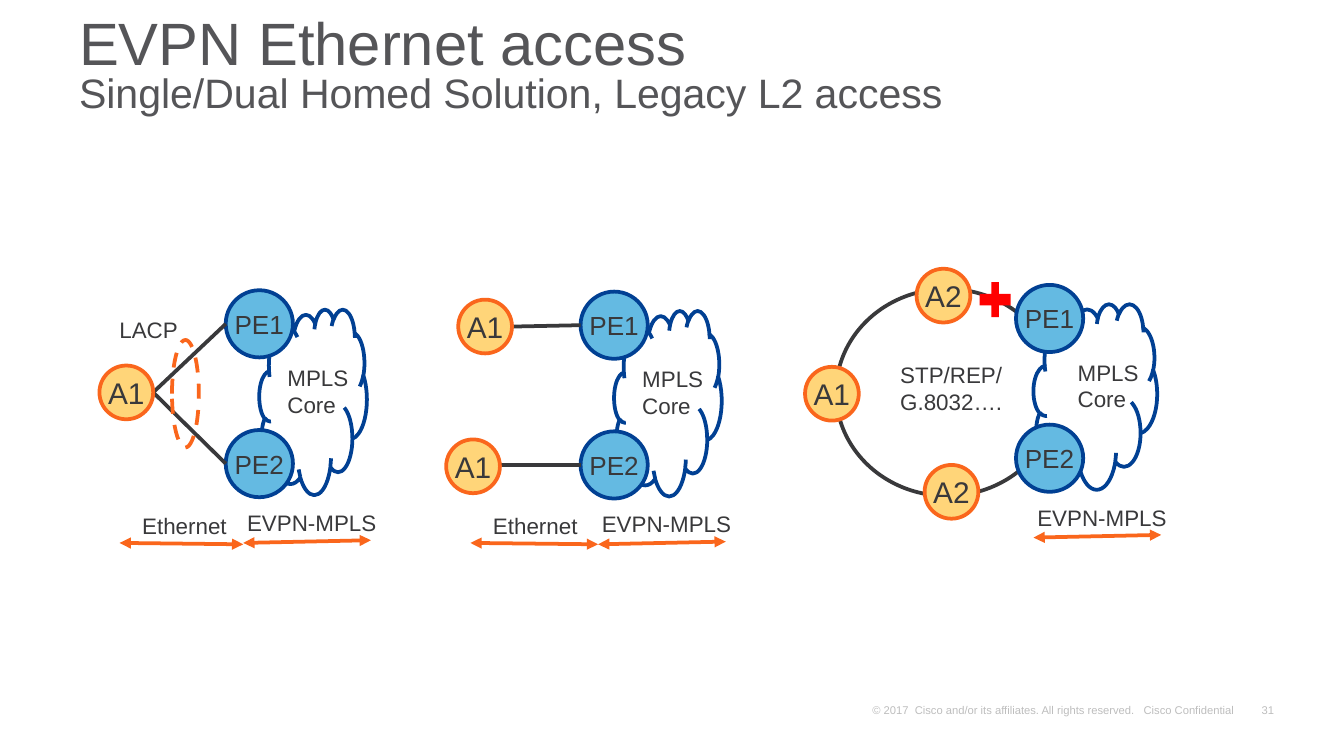
"""Build the EVPN Ethernet access slide with three access topologies."""
from dataclasses import dataclass
from typing import Optional

from lxml.etree import SubElement
from pptx import Presentation
from pptx.dml.color import RGBColor
from pptx.enum.dml import MSO_LINE
from pptx.enum.shapes import MSO_CONNECTOR, MSO_SHAPE as Preset
from pptx.enum.text import MSO_ANCHOR as Anchor, PP_ALIGN as Align
from pptx.oxml.ns import qn
from pptx.util import Inches, Pt

INK = RGBColor(0x39, 0x39, 0x3B)
TITLE_GRAY = RGBColor(0x55, 0x55, 0x58)
BLACK = RGBColor(0, 0, 0)
WHITE = RGBColor(0xFF, 0xFF, 0xFF)
NAVY = RGBColor(0x01, 0x40, 0x93)
SKY = RGBColor(0x64, 0xBA, 0xE2)
SAND = RGBColor(0xFF, 0xD5, 0x79)
ORANGE = RGBColor(0xFA, 0x66, 0x1C)
RED = RGBColor(0xFF, 0, 0)

Box = tuple[float, float, float, float]
Point = tuple[float, float]


@dataclass
class Style:
    fill: Optional[RGBColor]
    line: Optional[RGBColor]
    size: int = 12


@dataclass
class Core:
    left: float
    top: float
    cloud_dx: float = 0.25
    cloud_width: float = 0.8
    cloud_fill: Optional[RGBColor] = None


@dataclass
class AccessNode:
    label: str
    left: float
    top: float


PROVIDER_EDGE = Style(SKY, NAVY, 14)
ACCESS = Style(SAND, ORANGE, 16)
NODE_SIZE = 0.4
EDGE_SIZE = 0.5
EDGE_PITCH = 1.04

LAG_CORE = Core(1.68, 2.16)
SINGLE_CORE = Core(4.32, 2.17)
RING_CORE = Core(7.56, 2.12, 0.13, 0.92, WHITE)
ACCESS_NODES = [
    AccessNode("A1", 0.74, 2.72),
    AccessNode("A1", 3.41, 2.23),
    AccessNode("A1", 3.32, 3.27),
    AccessNode("A1", 5.99, 2.73),
    AccessNode("A2", 6.82, 2.0),
    AccessNode("A2", 6.88, 3.46),
]
ACCESS_LINKS = [
    ((1.14, 2.92), (1.68, 2.41)),
    ((1.68, 3.45), (1.14, 2.92)),
    ((3.81, 2.43), (4.32, 2.42)),
    ((4.32, 3.46), (3.71, 3.46)),
]


def write(paragraph, text: str, size: int, color: RGBColor = INK):
    run = paragraph.add_run()
    run.text = text
    run.font.color.rgb = color
    for name, value in {"name": "Arial", "size": Pt(size)}.items():
        setattr(run.font, name, value)
    return run


def add_shape(slide, preset, box: Box, style: Style, text: str = ""):
    shape = slide.shapes.add_shape(preset, *map(Inches, box))
    shape.shadow.inherit = False
    if style.fill is None:
        shape.fill.background()
    else:
        shape.fill.solid()
        shape.fill.fore_color.rgb = style.fill
    if style.line is None:
        shape.line.fill.background()
    else:
        shape.line.color.rgb = style.line
        shape.line.width = Pt(2)
    if text:
        frame = shape.text_frame
        for name, value in {"word_wrap": False, "vertical_anchor": Anchor.MIDDLE}.items():
            setattr(frame, name, value)
        frame.paragraphs[0].alignment = Align.CENTER
        write(frame.paragraphs[0], text, style.size)
    return shape


def add_frame(slide, box: Box, **formats):
    frame = slide.shapes.add_textbox(*map(Inches, box)).text_frame
    for name, value in formats.items():
        setattr(frame, name, value)
    return frame


def add_label(slide, box: Box, *lines: str) -> None:
    frame = add_frame(slide, box, word_wrap=False)
    for index, line in enumerate(lines):
        paragraph = frame.add_paragraph() if index else frame.paragraphs[0]
        write(paragraph, line, 12)


def add_line(slide, start: Point, end: Point, color: RGBColor, arrows: bool = False) -> None:
    connector = slide.shapes.add_connector(
        MSO_CONNECTOR.STRAIGHT, *map(Inches, (*start, *end)))
    connector.line.color.rgb = color
    connector.line.width = Pt(2)
    properties = connector._element.spPr
    if arrows:
        outline = properties.find(qn("a:ln"))
        for tag in ("a:headEnd", "a:tailEnd"):
            SubElement(outline, qn(tag), type="triangle")
    SubElement(properties, qn("a:effectLst"))


def add_core(slide, core: Core) -> None:
    x, y = core.left, core.top
    add_shape(slide, Preset.CLOUD, (x + core.cloud_dx, y + 0.14, core.cloud_width, 1.38),
              Style(core.cloud_fill, NAVY))
    add_label(slide, (x + 0.36, y + 0.5, 0.71, 0.5), "MPLS", "Core")
    for index, name in enumerate(("PE1", "PE2")):
        add_shape(slide, Preset.OVAL, (x, y + index * EDGE_PITCH, EDGE_SIZE, EDGE_SIZE),
                  PROVIDER_EDGE, name)
    add_label(slide, (x + 0.06, y + 1.58, 1.17, 0.3), "EVPN-MPLS")
    add_line(slide, (x + 1.08, y + 1.86), (x + 0.13, y + 1.88), ORANGE, arrows=True)


def add_ethernet_span(slide, left: float, core: Core) -> None:
    add_line(slide, (core.left + 0.13, 4.05), (left, 4.04), ORANGE, arrows=True)
    add_label(slide, (left + 0.07, 3.76, 0.84, 0.3), "Ethernet")


def add_title(slide) -> None:
    frame = add_frame(slide, (0.49, 0.11, 9.13, 0.8), word_wrap=True,
                      vertical_anchor=Anchor.MIDDLE)
    paragraph = frame.paragraphs[0]
    paragraph.line_spacing = 0.8
    write(paragraph, "EVPN Ethernet access", 32, TITLE_GRAY)
    paragraph.add_line_break()
    write(paragraph, "Single/Dual Homed Solution, Legacy L2 access", 22, TITLE_GRAY)


def add_footer(slide, box: Box, text: str, align, wrap: bool) -> None:
    frame = add_frame(slide, box, word_wrap=wrap, vertical_anchor=Anchor.BOTTOM,
                      margin_left=Inches(0.07), margin_right=Inches(0.07),
                      margin_top=Inches(0.03), margin_bottom=Inches(0.03))
    frame.paragraphs[0].alignment = align
    run = write(frame.paragraphs[0], text, 6, BLACK)
    color = run._r.rPr.find(qn("a:solidFill"))[0]
    SubElement(color, qn("a:alpha"), val="25000")


def main() -> None:
    deck = Presentation()
    deck.slide_width, deck.slide_height = Inches(10), Inches(10 * 9 / 16)
    slide = deck.slides.add_slide(deck.slide_layouts[6])

    add_footer(slide, (9.31, 5.19, 0.24, 0.17), "31", Align.RIGHT, False)
    add_footer(slide, (6.42, 5.19, 2.91, 0.17),
               "© 2017  Cisco and/or its affiliates. All rights reserved.   Cisco Confidential",
               Align.LEFT, True)
    add_shape(slide, Preset.OVAL, (6.22, 2.15, 1.65, 1.54), Style(None, INK))
    add_title(slide)
    for core in (LAG_CORE, SINGLE_CORE, RING_CORE):
        add_core(slide, core)
    for start, end in ACCESS_LINKS:
        add_line(slide, start, end, INK)
    for node in ACCESS_NODES:
        add_shape(slide, Preset.OVAL, (node.left, node.top, NODE_SIZE, NODE_SIZE),
                  ACCESS, node.label)
    add_ethernet_span(slide, 0.89, LAG_CORE)
    add_ethernet_span(slide, 3.5, SINGLE_CORE)
    add_label(slide, (0.79, 2.3, 0.64, 0.3), "LACP")
    bundle = add_shape(slide, Preset.OVAL, (1.28, 2.53, 0.2, 0.8), Style(None, ORANGE))
    bundle.line.dash_style = MSO_LINE.DASH
    add_label(slide, (6.6, 2.64, 0.97, 0.5), "STP/REP/", "G.8032….")
    blocked = add_shape(slide, Preset.CROSS, (7.29, 2.1, 0.23, 0.26), Style(RED, None))
    blocked.adjustments[0] = 0.38
    deck.save("out.pptx")


if __name__ == "__main__":
    main()
